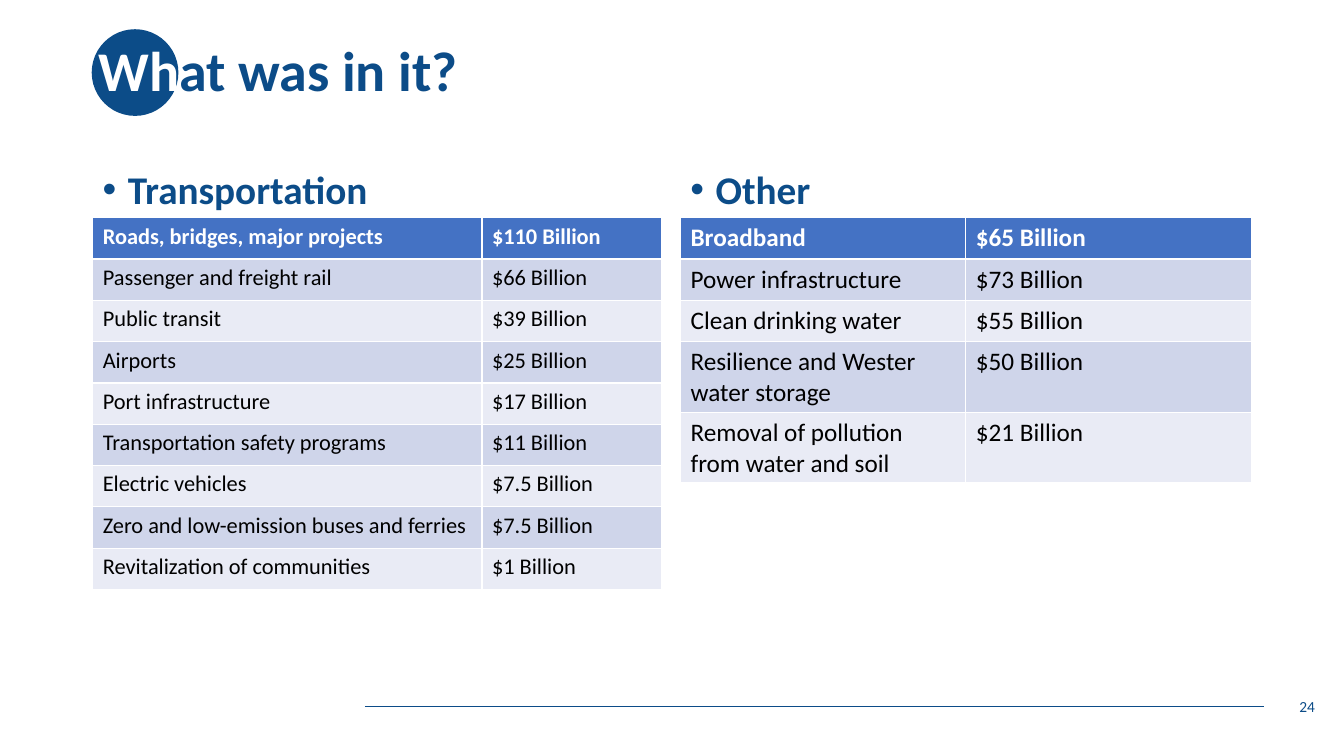
from lxml.etree import SubElement
from pptx import Presentation
from pptx.dml.color import RGBColor
from pptx.enum.shapes import MSO_CONNECTOR, MSO_SHAPE
from pptx.enum.text import MSO_ANCHOR, PP_ALIGN
from pptx.oxml.ns import qn
from pptx.util import Inches, Pt

COLORS = {
    "navy": "0C4C88",
    "white": "FFFFFF",
    "black": "000000",
    "header": "4472C4",
    "band_dark": "CFD5EA",
    "band_light": "E9EBF5",
}


def color(name):
    return RGBColor.from_string(COLORS[name])


def add_run(paragraph, text, size, color_name, bold=False):
    run = paragraph.add_run()
    run.text = text
    run.font.name = "Calibri"
    run.font.size = Pt(size)
    run.font.bold = bold
    run.font.color.rgb = color(color_name)


presentation = Presentation()
presentation.slide_width = Inches(13.33)
presentation.slide_height = Inches(7.5)
slide = presentation.slides.add_slide(presentation.slide_layouts[5])
shapes = slide.shapes

# Footer line and title circle
footer_line = shapes.add_connector(
    MSO_CONNECTOR.STRAIGHT, Inches(3.62), Inches(7.01), Inches(12.54), Inches(7.01))
footer_line.line.color.rgb = color("navy")
footer_line.line.width = Pt(0.5)
SubElement(footer_line.element.spPr, qn("a:effectLst"))

circle = shapes.add_shape(
    MSO_SHAPE.OVAL, Inches(0.91), Inches(0.29), Inches(0.86), Inches(0.86))
circle.shadow.inherit = False
circle.fill.solid()
circle.fill.fore_color.rgb = color("navy")
circle.line.fill.background()

# Title, brought in front of the circle
title = shapes.title
title.element.getparent().append(title.element)
title.left, title.top = Inches(0.88), Inches(0)
title.width, title.height = Inches(11.5), Inches(1.45)
title.text_frame.vertical_anchor = MSO_ANCHOR.MIDDLE
paragraph = title.text_frame.paragraphs[0]
paragraph.alignment = PP_ALIGN.LEFT
paragraph.line_spacing = 0.9
add_run(paragraph, "Wh", 40, "white", bold=True)
add_run(paragraph, "at was in it?", 40, "navy", bold=True)

# Slide number
number_box = shapes.add_textbox(Inches(10.14), Inches(6.81), Inches(3), Inches(0.4))
number_box.text_frame.word_wrap = True
number_box.text_frame.vertical_anchor = MSO_ANCHOR.MIDDLE
paragraph = number_box.text_frame.paragraphs[0]
paragraph.alignment = PP_ALIGN.RIGHT
add_run(paragraph, "24", 11, "navy")

# Columns: heading, left, column widths, text size, (label, amount, row height)
ROW, TALL_ROW = 0.41, 0.7
columns = [
    ("Transportation", 0.92, (3.86, 1.78), 16, [
        ("Roads, bridges, major projects", "$110 Billion", ROW),
        ("Passenger and freight rail", "$66 Billion", ROW),
        ("Public transit", "$39 Billion", ROW),
        ("Airports", "$25 Billion", ROW),
        ("Port infrastructure", "$17 Billion", ROW),
        ("Transportation safety programs", "$11 Billion", ROW),
        ("Electric vehicles", "$7.5 Billion", ROW),
        ("Zero and low-emission buses and ferries", "$7.5 Billion", ROW),
        ("Revitalization of communities", "$1 Billion", ROW),
    ]),
    ("Other", 6.75, (2.83, 2.83), 18, [
        ("Broadband", "$65 Billion", ROW),
        ("Power infrastructure", "$73 Billion", ROW),
        ("Clean drinking water", "$55 Billion", ROW),
        ("Resilience and Wester water storage", "$50 Billion", TALL_ROW),
        ("Removal of pollution from water and soil", "$21 Billion", TALL_ROW),
    ]),
]

for heading, left, widths, size, rows in columns:
    width = Inches(sum(widths))
    heading_box = shapes.add_textbox(Inches(left), Inches(1.26), width, Inches(0.9))
    heading_box.text_frame.word_wrap = True
    heading_box.text_frame.vertical_anchor = MSO_ANCHOR.BOTTOM
    paragraph = heading_box.text_frame.paragraphs[0]
    paragraph.line_spacing = 0.9
    properties = paragraph._p.get_or_add_pPr()
    properties.set("marL", str(Inches(0.25)))
    properties.set("indent", str(Inches(-0.25)))
    SubElement(properties, qn("a:buFont")).set("typeface", "Arial")
    SubElement(properties, qn("a:buChar")).set("char", "•")
    add_run(paragraph, heading, 28, "navy", bold=True)

    # The default table style supplies the white cell borders
    table = shapes.add_table(
        len(rows), 2, Inches(left), Inches(2.16), width, Inches(ROW * len(rows))).table
    for table_column, column_width in zip(table.columns, widths):
        table_column.width = Inches(column_width)
    for row_index, (label, amount, height) in enumerate(rows):
        table.rows[row_index].height = Inches(height)
        is_header = row_index == 0
        band = "band_dark" if row_index % 2 else "band_light"
        for column_index, text in enumerate((label, amount)):
            cell = table.cell(row_index, column_index)
            cell.fill.solid()
            cell.fill.fore_color.rgb = color("header" if is_header else band)
            add_run(cell.text_frame.paragraphs[0], text, size,
                    "white" if is_header else "black", bold=is_header)

presentation.save("out.pptx")
